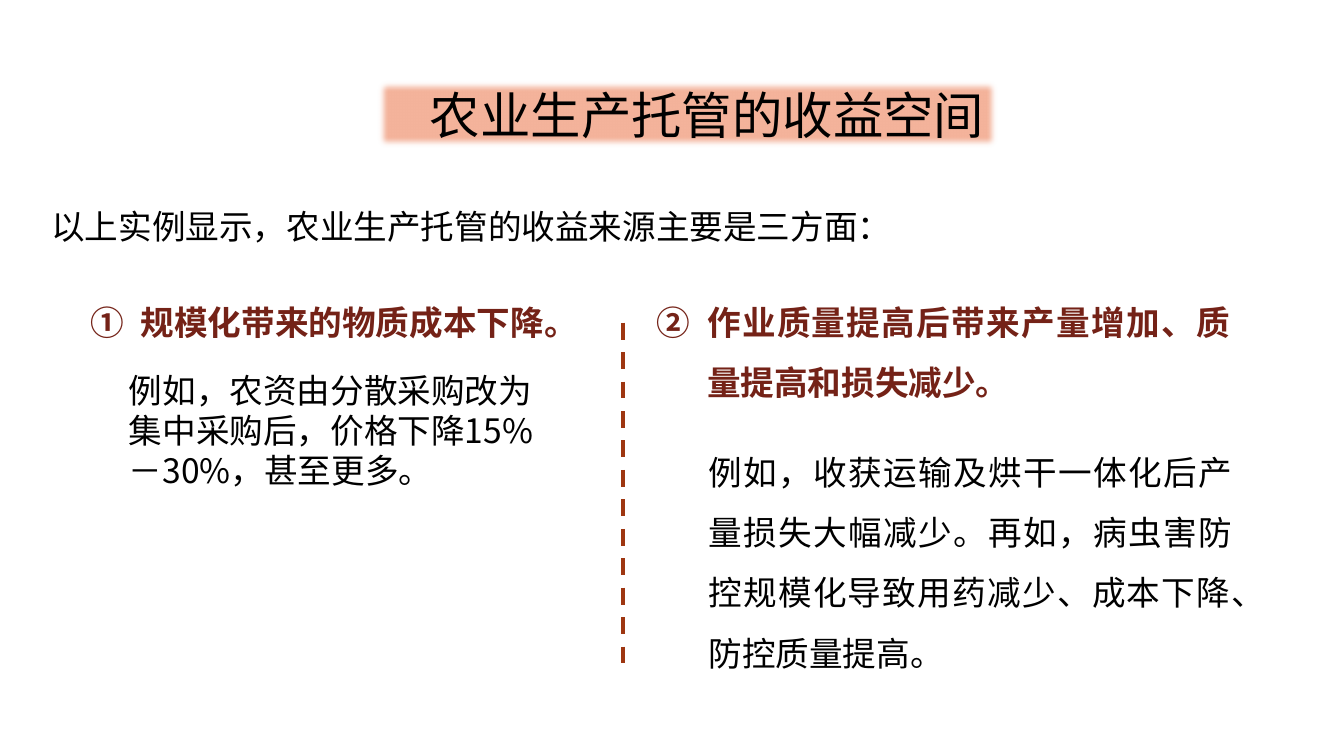
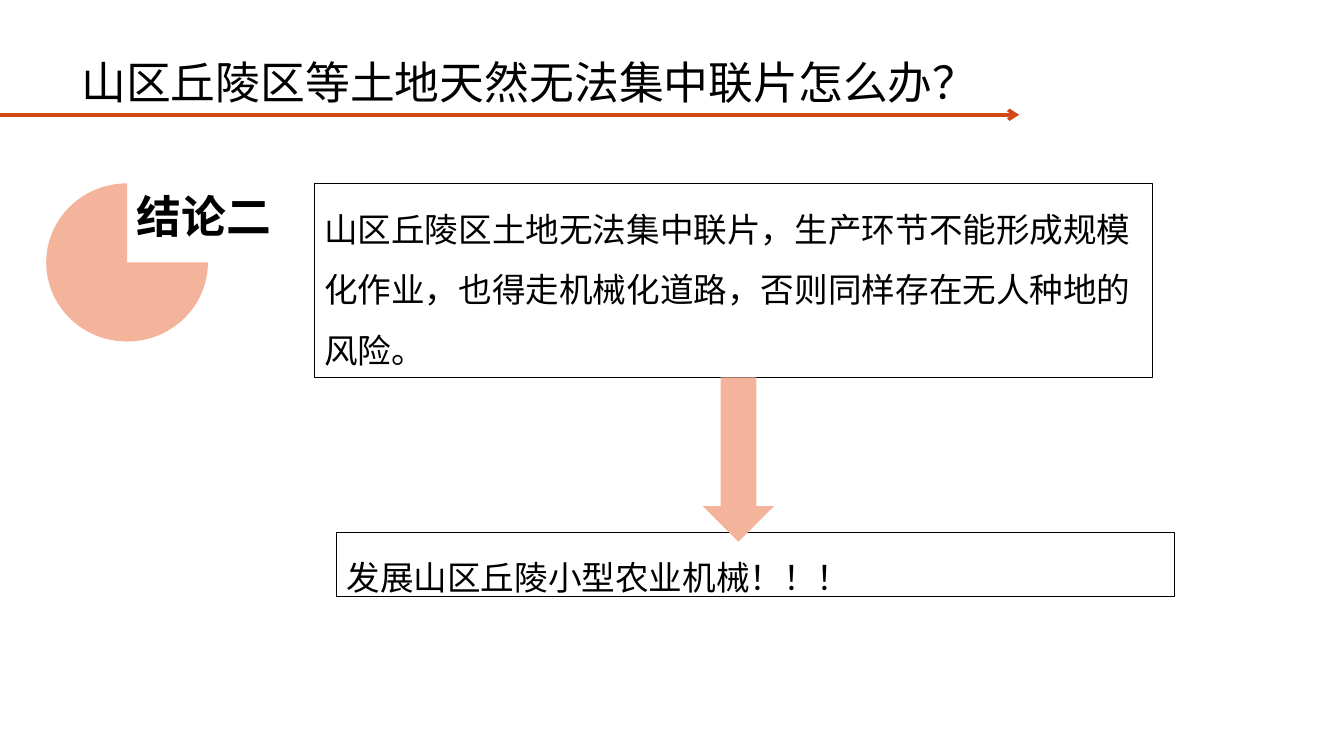
from pptx import Presentation
from pptx.util import Pt
from pptx.dml.color import RGBColor
from pptx.enum.dml import MSO_LINE
from pptx.enum.shapes import MSO_CONNECTOR, MSO_SHAPE
from pptx.enum.text import MSO_ANCHOR, MSO_AUTO_SIZE, PP_ALIGN
from pptx.oxml.ns import qn
from lxml.etree import SubElement

FONT = "Noto Sans CJK SC"
HEX = {"black": "000000", "peach": "F4B39B", "brown": "742217",
       "rust": "9E3611", "orange": "D34817"}
RGB = {name: RGBColor.from_string(code) for name, code in HEX.items()}


def add_box(slide, area, text="", size=24, color="black", bold=False,
            space=1.5, align=PP_ALIGN.LEFT, kind=None, fill=None, line=None):
    """Add a text box, or a preset shape when kind is given."""
    area = [Pt(n) for n in area]
    if kind is None:
        box = slide.shapes.add_textbox(*area)
    else:
        box = slide.shapes.add_shape(kind, *area)
        box.shadow.inherit = False
        if fill:
            box.fill.solid()
            box.fill.fore_color.rgb = RGB[fill]
        else:
            box.fill.background()
        if line:
            box.line.color.rgb = RGB[line]
            box.line.width = Pt(0.75)
        else:
            box.line.fill.background()
    if text:
        frame = box.text_frame
        frame.word_wrap = True
        frame.auto_size = MSO_AUTO_SIZE.SHAPE_TO_FIT_TEXT
        frame.vertical_anchor = MSO_ANCHOR.TOP
        frame.text = text
        para = frame.paragraphs[0]
        para.alignment = align
        para.line_spacing = space
        font = para.runs[0].font
        font.name, font.size, font.bold = FONT, Pt(size), bold
        font.color.rgb = RGB[color]
        SubElement(para.runs[0]._r.rPr, qn("a:ea"), typeface=FONT)
    return box


def add_line(slide, ends, color, width):
    line = slide.shapes.add_connector(
        MSO_CONNECTOR.STRAIGHT, *[Pt(n) for n in ends])
    line.line.color.rgb = RGB[color]
    line.line.width = Pt(width)
    SubElement(line._element.spPr, qn("a:effectLst"))
    return line


deck = Presentation()
deck.slide_width, deck.slide_height = Pt(960), Pt(540)
blank = deck.slide_layouts[6]
both = PP_ALIGN.JUSTIFY

# Slide 1: title on a soft-edged band
slide = deck.slides.add_slide(blank)
title = add_box(slide, (268, 56, 446, 51), "农业生产托管的收益空间", 36,
                space=1.0, align=both, kind=MSO_SHAPE.RECTANGLE, fill="peach")
title.text_frame.vertical_anchor = MSO_ANCHOR.MIDDLE
title.text_frame.paragraphs[0]._p.get_or_add_pPr().set("indent", str(Pt(32)))
effects = title._element.spPr.find(qn("a:effectLst"))
SubElement(effects, qn("a:softEdge"), rad=str(Pt(5)))

add_box(slide, (29.5, 129, 901.5, 51),
        "以上实例显示，农业生产托管的收益来源主要是三方面：", align=both)

# Numbered headings
heads = [
    ((57.5, 197.5, 372, 46), "规模化带来的物质成本下降。"),
    ((462, 197.5, 424, 89), "作业质量提高后带来产量增加、质量提高和损失减少。"),
]
for num, (area, text) in enumerate(heads, 1):
    head = add_box(slide, area, text, color="brown", bold=True, align=both)
    props = head.text_frame.paragraphs[0]._p.get_or_add_pPr()
    props.set("marL", str(Pt(36)))
    props.set("indent", str(Pt(-36)))
    SubElement(props, qn("a:buAutoNum"), type="circleNumDbPlain",
               startAt=str(num))

# Examples and divider
add_box(slide, (85, 260.5, 307, 94.5),
        "例如，农资由分散采购改为集中采购后，价格下降15%－30%，甚至更多。",
        space=1.0)
add_box(slide, (499, 304.5, 388, 181.5),
        "例如，收获运输及烘干一体化后产量损失大幅减少。再如，病虫害防控规模化"
        "导致用药减少、成本下降、防控质量提高。", align=both)
rule = add_line(slide, (445, 230.5, 445, 481), "rust", 3)
rule.line.dash_style = MSO_LINE.DASH

# Slide 2: title over an arrow
slide = deck.slides.add_slide(blank)
arrow = add_line(slide, (0, 82, 728, 82), "orange", 2.5)
SubElement(arrow.line._get_or_add_ln(), qn("a:tailEnd"), type="arrow")
add_box(slide, (51, 16.5, 728, 58.5),
        "山区丘陵区等土地天然无法集中联片怎么办？", 32)

# Framed statements joined by a block arrow
frames = [
    ((224.5, 131, 598.5, 138.5),
     "山区丘陵区土地无法集中联片，生产环节不能形成规模化作业，也得走机械化道路，"
     "否则同样存在无人种地的风险。"),
    ((240.5, 380, 598.5, 46), "发展山区丘陵小型农业机械！！！"),
]
for area, text in frames:
    add_box(slide, area, text, kind=MSO_SHAPE.RECTANGLE, line="black")
add_box(slide, (502, 269.5, 51, 117.5), kind=MSO_SHAPE.DOWN_ARROW, fill="peach")

# Conclusion label beside the pie
add_box(slide, (33, 131, 115.5, 113), kind=MSO_SHAPE.PIE, fill="peach")
add_box(slide, (90.5, 131, 134, 46), "结论二", 32, bold=True, space=1.0)

deck.save("out.pptx")
